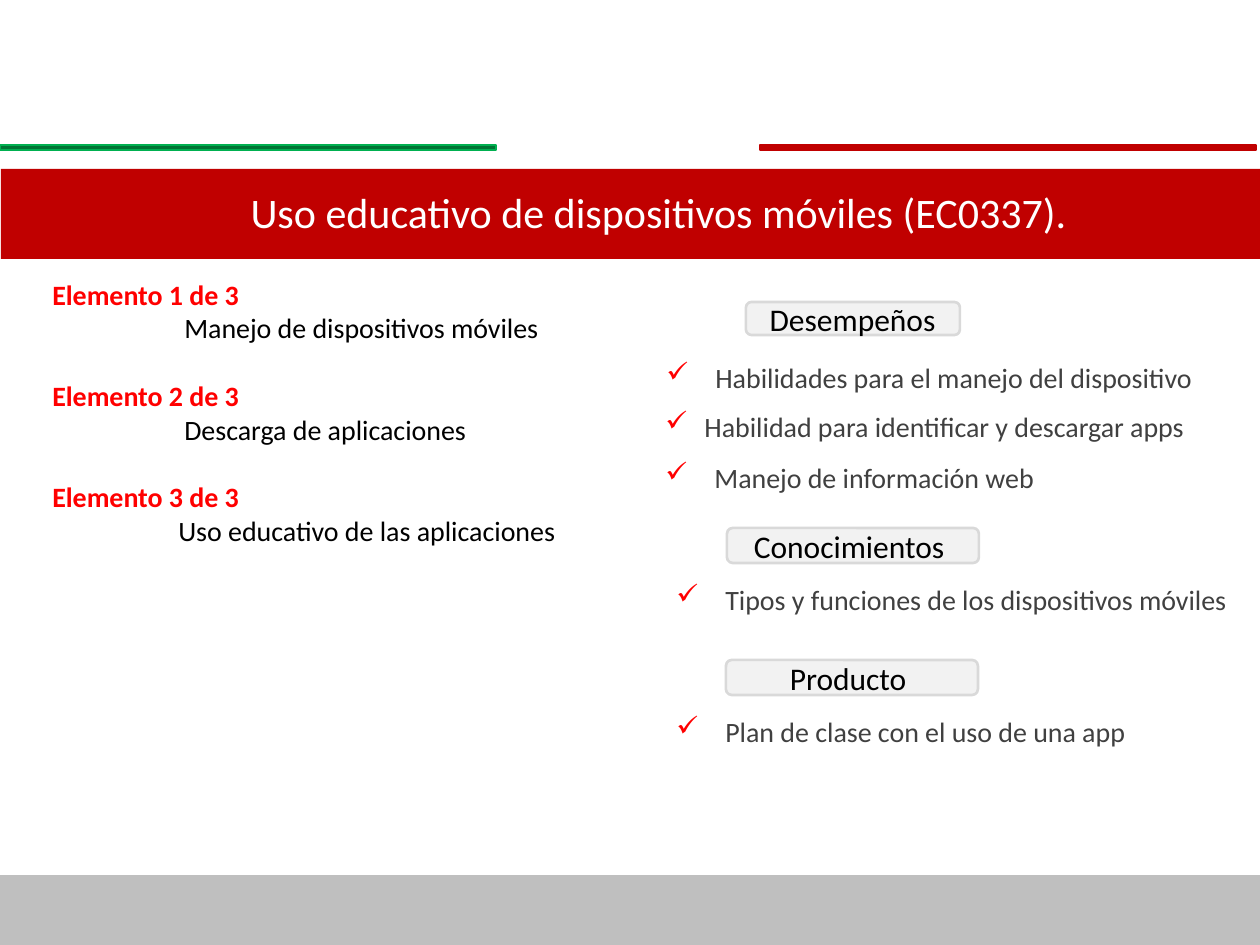
from dataclasses import dataclass

from lxml import etree
from pptx import Presentation
from pptx import util as u
from pptx.dml.color import RGBColor
from pptx.enum import shapes, text
from pptx.oxml import ns

SCALE = u.Inches(1) / 126
FONT = "Calibri"
COLOURS = {
    "white": "FFFFFF", "black": "000000", "body": "404040",
    "red": "FF0000", "banner": "C00000", "green": "007434",
    "green_edge": "00B050", "footer": "BFBFBF",
    "label": "F2F2F2", "label_edge": "D9D9D9",
}


@dataclass
class Bar:
    left: int
    top: int
    width: int
    height: int
    fill: str
    edge: str | None = None


@dataclass
class Label:
    left: int
    top: int
    width: int
    height: int
    caption: str
    right_inset: int = 13


@dataclass
class Bullet:
    left: int
    top: int
    width: int
    caption: str
    indent: int = 49
    wrap: bool = False


@dataclass
class Element:
    heading: str
    detail: str
    indent: int


BARS = [
    Bar(0, 876, 1260, 69, "footer", "footer"),
    Bar(0, 145, 496, 5, "green", "green_edge"),
    Bar(760, 145, 496, 5, "banner", "banner"),
    Bar(1, 169, 1260, 90, "banner"),
]
ELEMENTS = [
    Element("Elemento 1 de 3", "Manejo de dispositivos móviles", 132),
    Element("Elemento 2 de 3", "Descarga de aplicaciones", 132),
    Element("Elemento 3 de 3", "Uso educativo de las aplicaciones", 126),
]
LABELS = [
    Label(746, 302, 214, 33, "Desempeños"),
    Label(727, 528, 252, 35, "Conocimientos", 20),
    Label(726, 660, 252, 35, "Producto", 20),
]
BULLETS = [
    Bullet(654, 354, 557, "Habilidades para el manejo del dispositivo"),
    Bullet(653, 403, 551, "Habilidad para identificar y descargar apps", 39),
    Bullet(653, 454, 399, "Manejo de información web"),
    Bullet(664, 576, 630, "Tipos y funciones de los dispositivos móviles", wrap=True),
    Bullet(664, 708, 630, "Plan de clase con el uso de una app", wrap=True),
]


def px(value: int) -> int:
    return round(value * SCALE)


def colour(name: str) -> RGBColor:
    return RGBColor.from_string(COLOURS[name])


def write(paragraph, caption: str, *, size: int = 16, tint: str = "black",
          bold: bool = False, align=text.PP_ALIGN.LEFT, before: float = 0,
          margin: int = 0, hanging: int = 0) -> None:
    properties = paragraph._p.get_or_add_pPr()
    properties.set("marL", str(px(margin)))
    properties.set("indent", str(-px(hanging)))
    paragraph.alignment = align
    paragraph.space_before = u.Pt(before)
    run = paragraph.add_run()
    run.text = caption
    run.font.name = FONT
    run.font.size = u.Pt(size)
    run.font.bold = bold
    run.font.color.rgb = colour(tint)


def add_box(slide, left: int, top: int, width: int, height: int, wrap: bool = True):
    shape = slide.shapes.add_textbox(px(left), px(top), px(width), px(height))
    shape.text_frame.word_wrap = wrap
    shape.text_frame.auto_size = text.MSO_AUTO_SIZE.SHAPE_TO_FIT_TEXT
    return shape.text_frame


def add_block(slide, kind, item: Bar | Label, fill: str, edge: str | None, weight: float):
    shape = slide.shapes.add_shape(
        kind, px(item.left), px(item.top), px(item.width), px(item.height))
    shape.shadow.inherit = False
    shape.fill.solid()
    shape.fill.fore_color.rgb = colour(fill)
    if edge:
        shape.line.color.rgb = colour(edge)
        shape.line.width = u.Pt(weight)
    else:
        shape.line.fill.background()
    return shape


def add_label(slide, label: Label) -> None:
    shape = add_block(slide, shapes.MSO_SHAPE.ROUNDED_RECTANGLE, label,
                      "label", "label_edge", 1.5)
    frame = shape.text_frame
    frame.margin_right = px(label.right_inset)
    frame.vertical_anchor = text.MSO_ANCHOR.MIDDLE
    write(frame.paragraphs[0], label.caption, size=18, align=text.PP_ALIGN.CENTER)


def add_bullet(slide, bullet: Bullet) -> None:
    frame = add_box(slide, bullet.left, bullet.top, bullet.width, 47, bullet.wrap)
    paragraph = frame.paragraphs[0]
    properties = paragraph._p.get_or_add_pPr()
    tint = etree.SubElement(properties, ns.qn("a:buClr"))
    etree.SubElement(tint, ns.qn("a:srgbClr"), val=COLOURS["red"])
    etree.SubElement(properties, ns.qn("a:buChar"), char="✓")
    write(paragraph, bullet.caption, tint="body", align=text.PP_ALIGN.JUSTIFY,
          margin=bullet.indent, hanging=bullet.indent)


def add_elements(slide, elements: list[Element]) -> None:
    frame = add_box(slide, 40, 271, 630, 292)
    for index, element in enumerate(elements):
        heading = frame.add_paragraph() if index else frame.paragraphs[0]
        write(heading, element.heading, tint="red", bold=True,
              before=19.5 if index else 0)
        write(frame.add_paragraph(), element.detail, margin=element.indent)


def main() -> None:
    presentation = Presentation()
    presentation.slide_width = px(1260)
    presentation.slide_height = px(945)
    slide = presentation.slides.add_slide(presentation.slide_layouts[6])
    for bar in BARS:
        add_block(slide, shapes.MSO_SHAPE.RECTANGLE, bar, bar.fill, bar.edge, 1)
    title = add_box(slide, 57, 180, 1203, 63)
    write(title.paragraphs[0], "Uso educativo de dispositivos móviles (EC0337).",
          size=24, tint="white", align=text.PP_ALIGN.CENTER)
    add_elements(slide, ELEMENTS)
    for label in LABELS:
        add_label(slide, label)
    for bullet in BULLETS:
        add_bullet(slide, bullet)
    presentation.save("out.pptx")


if __name__ == "__main__":
    main()
